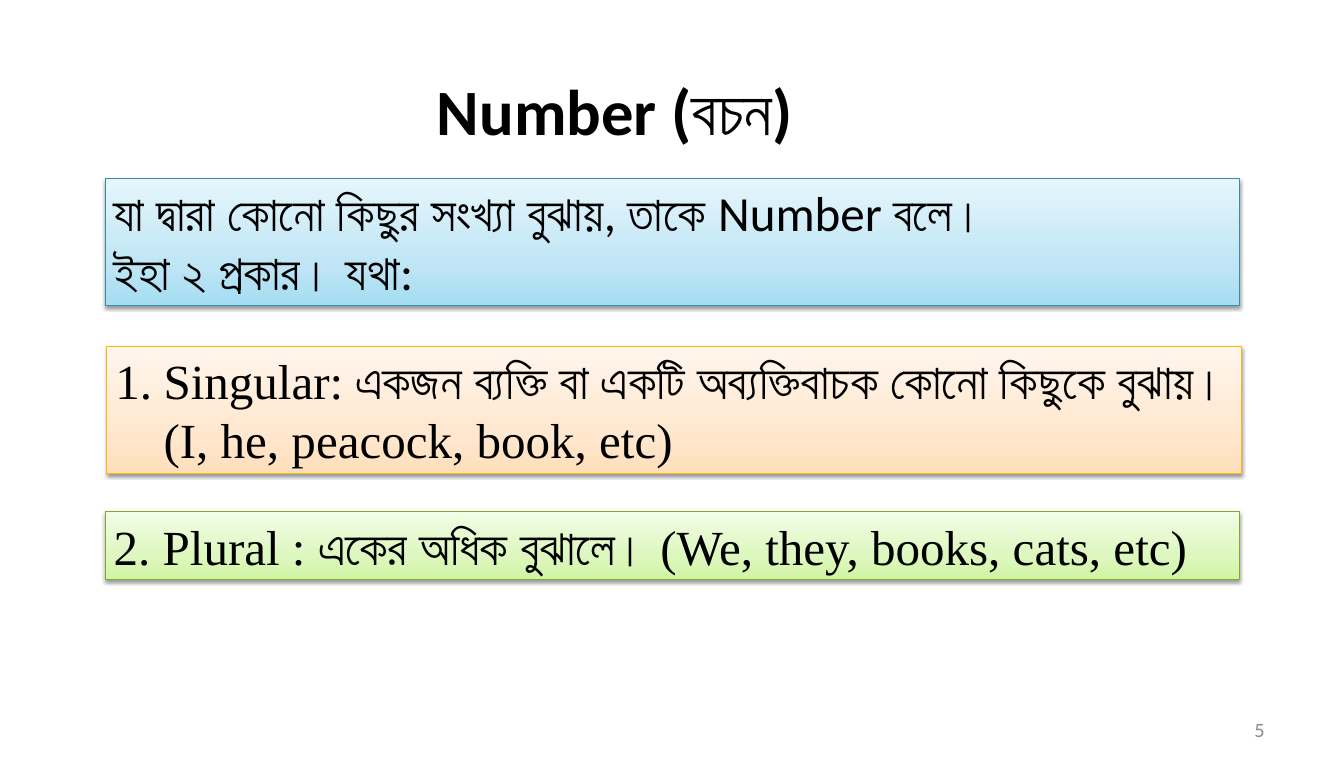
import copy
from dataclasses import dataclass

import lxml.etree
import pptx
import pptx.dml.color
import pptx.enum.shapes
import pptx.enum.text
import pptx.oxml.ns
import pptx.util

Inches = pptx.util.Inches
Pt = pptx.util.Pt
Align = pptx.enum.text.PP_ALIGN
Anchor = pptx.enum.text.MSO_ANCHOR
qn = pptx.oxml.ns.qn


@dataclass(frozen=True)
class Theme:
    sans: str = "Calibri"
    serif: str = "Times New Roman"
    ink: str = "000000"
    gray: str = "8C8C8C"
    title: int = 54
    body: int = 41
    small: int = 17
    # Each tone holds its line colour, then its gradient from bottom to top.
    blue: tuple = ("348FA6", "A5DDF3", "C1E6F5", "E6F6FC")
    orange: tuple = ("FEB604", "FFDFBC", "FFE8D0", "FFF6ED")
    green: tuple = ("82A92F", "D0F5A3", "DDF7BF", "F2FDE6")


THEME = Theme()


def rgb(code):
    return pptx.dml.color.RGBColor.from_string(code)


def write(par, text, font, size, color=THEME.ink, bold=False):
    run = par.add_run()
    run.text = text
    run.font.name = font
    run.font.size = Pt(size)
    run.font.bold = bold
    run.font.color.rgb = rgb(color)


def pad(frame, side, top):
    frame.word_wrap = True
    frame.margin_left = frame.margin_right = Inches(side)
    frame.margin_top = frame.margin_bottom = Inches(top)


def label(slide, box, text, size, color, align, bold=False, inset=(0.1, 0.05)):
    frame = slide.shapes.add_textbox(*map(Inches, box)).text_frame
    pad(frame, *inset)
    frame.vertical_anchor = Anchor.MIDDLE
    par = frame.paragraphs[0]
    par.alignment = align
    write(par, text, THEME.sans, size, color, bold)


def shade(shape, colors):
    """Fill the shape with three gradient stops, from bottom to top."""
    fill = shape.fill
    fill.gradient()
    fill.gradient_angle = 90
    stops = shape._element.spPr.find(qn("a:gradFill")).find(qn("a:gsLst"))
    stops.append(copy.deepcopy(stops[-1]))
    for stop, color, place in zip(fill.gradient_stops, colors, (0, 0.35, 1)):
        stop.color.rgb = rgb(color)
        stop.position = place


def drop(shape):
    """Give the shape a soft shadow straight below it."""
    shape.shadow.inherit = False
    effects = shape._element.spPr.find(qn("a:effectLst"))
    outer = lxml.etree.SubElement(
        effects, qn("a:outerShdw"), blurRad=str(Pt(3.1)), dist=str(Pt(1.6)),
        dir="5400000", rotWithShape="0")
    color = lxml.etree.SubElement(outer, qn("a:srgbClr"), val="000000")
    lxml.etree.SubElement(color, qn("a:alpha"), val="38000")


def hang(par, indent, number):
    props = par._p.get_or_add_pPr()
    props.set("marL", str(Inches(indent)))
    props.set("indent", str(-Inches(indent)))
    if number:
        lxml.etree.SubElement(props, qn("a:buFont"), typeface=THEME.serif)
        lxml.etree.SubElement(props, qn("a:buAutoNum"), type="arabicPeriod")


def panel(slide, box, tone, lines, indent=0, number=False):
    """Draw a shaded box; each line is a list of (text, font) runs."""
    shape = slide.shapes.add_shape(
        pptx.enum.shapes.MSO_SHAPE.RECTANGLE, *map(Inches, box))
    shade(shape, tone[1:])
    shape.line.color.rgb = rgb(tone[0])
    shape.line.width = Pt(0.75)
    drop(shape)
    frame = shape.text_frame
    pad(frame, 0.1, 0.05)
    frame.vertical_anchor = Anchor.TOP
    for i, line in enumerate(lines):
        par = frame.add_paragraph() if i else frame.paragraphs[0]
        par.alignment = Align.LEFT
        if indent:
            hang(par, indent, number)
        for text, font in line:
            write(par, text, font, THEME.body)


def main():
    deck = pptx.Presentation()
    deck.slide_width = Inches(15.6)
    deck.slide_height = Inches(8.88)
    slide = deck.slides.add_slide(deck.slide_layouts[6])
    sans, serif = THEME.sans, THEME.serif

    label(slide, (4.55, 0.77, 5.17, 1.01), "Number (বচন)",
          THEME.title, THEME.ink, Align.CENTER, bold=True)
    panel(slide, (1.22, 2.07, 13.17, 1.48), THEME.blue, [
        [("যা দ্বারা কোনো কিছুর সংখ্যা বুঝায়, তাকে Number বলে।", sans)],
        [("ইহা ২ প্রকার। যথা:", sans)],
    ])
    panel(slide, (1.24, 4.02, 13.17, 1.48), THEME.orange, [[
        ("Singular: ", serif),
        ("একজন ব্যক্তি বা একটি অব্যক্তিবাচক কোনো কিছুকে বুঝায়। ", sans),
        ("(I, he, peacock, book, etc)", serif),
    ]], indent=0.56, number=True)
    panel(slide, (1.22, 5.94, 13.17, 0.79), THEME.green, [[
        ("2. Plural : ", serif),
        ("একের অধিক বুঝালে। ", sans),
        ("(We, they, books, cats, etc)", serif),
    ]], indent=0.81)
    label(slide, (11.18, 8.23, 3.64, 0.47), "5",
          THEME.small, THEME.gray, Align.RIGHT, inset=(0.14, 0.07))
    deck.save("out.pptx")


if __name__ == "__main__":
    main()
